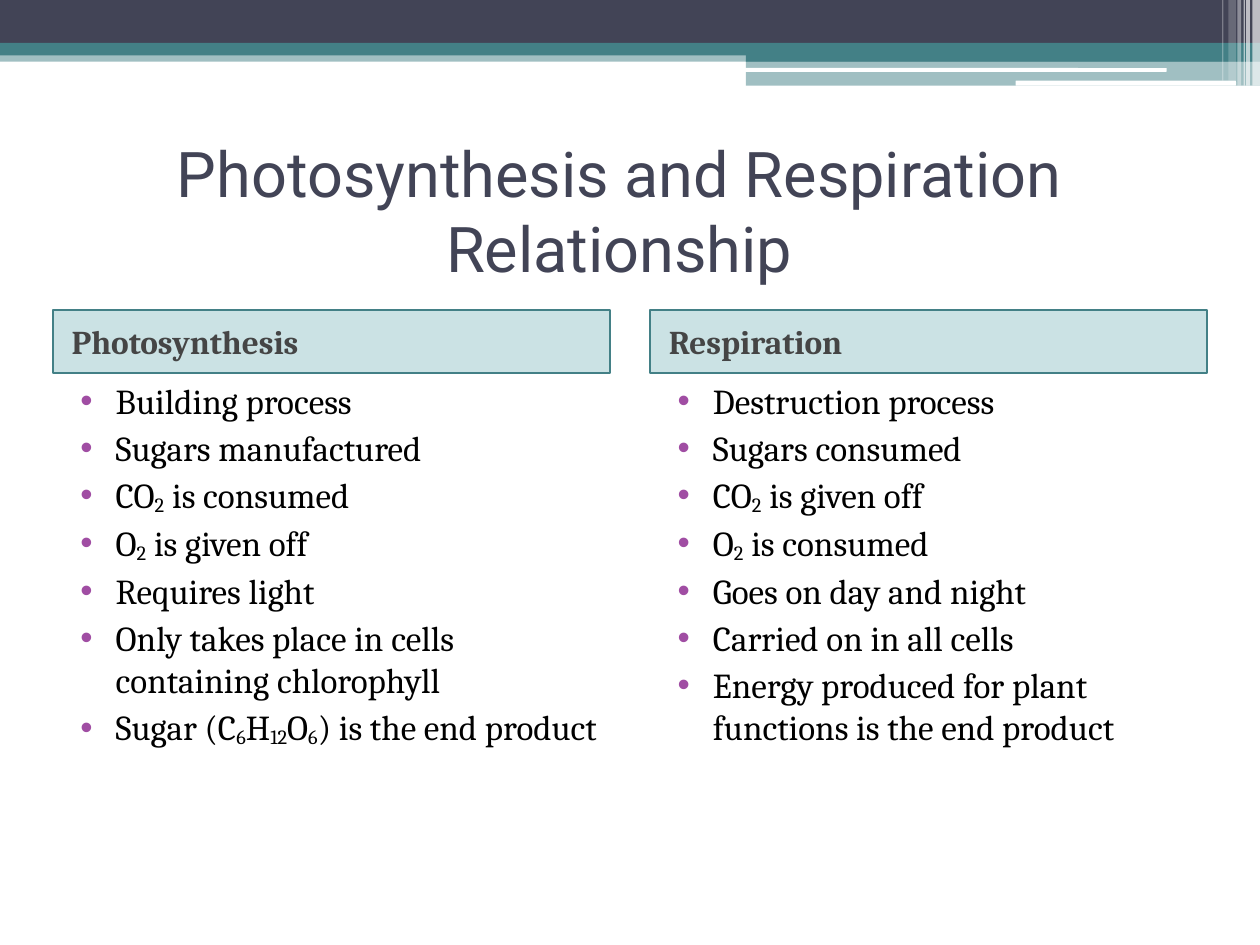
import pptx
import pptx.util
import pptx.dml.color
import pptx.enum.shapes
import pptx.enum.text
import pptx.oxml
import pptx.oxml.ns

Inches = pptx.util.Inches
Pt = pptx.util.Pt
SHAPE = pptx.enum.shapes.MSO_SHAPE
ANCHOR = pptx.enum.text.MSO_ANCHOR
ALIGN = pptx.enum.text.PP_ALIGN
NAVY, TEAL, WHITE = "424456", "438086", "FFFFFF"

# left, top, width, height, colour, opacity in percent
BANDS = [
    (0, 0.4, 10, 0.09, TEAL, 50),
    (0, 0, 10, 0.34, NAVY, 100),
    (0, 0.34, 10, 0.1, TEAL, 100),
    (5.92, 0.39, 4.08, 0.1, TEAL, 100),
    (5.92, 0.48, 4.08, 0.2, TEAL, 50),
]
WHITE_BARS = [(5.91, 0.54, 3.35, 0.03), (8.06, 0.64, 1.75, 0.04)]
# left, width, height, opacity in percent
STRIPES = [
    (9.94, 0.06, 0.68, 65),
    (9.89, 0.03, 0.68, 65),
    (9.87, 0.01, 0.68, 60),
    (9.82, 0.03, 0.68, 40),
    (9.75, 0.06, 0.64, 20),
    (9.7, 0.01, 0.64, 30),
]
# underscores enclose subscripts
COLUMNS = [
    (0.42, "Photosynthesis", [
        "Building process",
        "Sugars manufactured",
        "CO_2_ is consumed",
        "O_2_ is given off",
        "Requires light",
        "Only takes place in cells containing chlorophyll",
        "Sugar (C_6_H_12_O_6_) is the end product",
    ]),
    (5.16, "Respiration", [
        "Destruction process",
        "Sugars consumed",
        "CO_2_ is given off",
        "O_2_ is consumed",
        "Goes on day and night",
        "Carried on in all cells",
        "Energy produced for plant functions is the end product",
    ]),
]
COLUMN_WIDTH = 4.42


def rgb(value):
    """Turn a hex string into a colour."""
    return pptx.dml.color.RGBColor.from_string(value)


def sub_element(parent, tag, **attributes):
    """Append a DrawingML element with attributes."""
    element = pptx.oxml.parse_xml(f"<{tag} {pptx.oxml.ns.nsdecls('a')}/>")
    for name, value in attributes.items():
        element.set(name, str(value))
    parent.append(element)


def add_box(s, left, top, width, height, color, opacity=100, kind=SHAPE.RECTANGLE):
    """Add a filled shape without outline or shadow."""
    sp = s.shapes.add_shape(kind, Inches(left), Inches(top), Inches(width), Inches(height))
    sp.shadow.inherit = False
    sp.line.fill.background()
    sp.fill.solid()
    sp.fill.fore_color.rgb = rgb(color)
    if opacity < 100:
        fill_color = sp.fill._xPr.find(".//" + pptx.oxml.ns.qn("a:srgbClr"))
        sub_element(fill_color, "a:alpha", val=opacity * 1000)
    return sp


def format_run(r, size, color, font="Cambria", bold=False):
    """Set the font of a run."""
    r.font.name = font
    r.font.size = Pt(size)
    r.font.bold = bold
    r.font.color.rgb = rgb(color)


def indent(p, left, first=0):
    """Set the paragraph indents and the space before it."""
    p.space_before = Pt(3)
    pPr = p._p.get_or_add_pPr()
    pPr.set("marL", str(Inches(left)))
    pPr.set("indent", str(Inches(first)))
    return pPr


def add_title(s, text):
    """Place and format the slide title."""
    sp = s.shapes.title
    sp.left, sp.top, sp.width, sp.height = (Inches(v) for v in (0.33, 1.08, 9.17, 1.17))
    tf = sp.text_frame
    tf.text = text
    tf.word_wrap = True
    tf.auto_size = pptx.enum.text.MSO_AUTO_SIZE.NONE
    tf.vertical_anchor = ANCHOR.MIDDLE
    p = tf.paragraphs[0]
    p.alignment = ALIGN.CENTER
    format_run(p.runs[0], 36, NAVY, "Roboto")


def add_heading(s, left, text):
    """Add an outlined column heading."""
    sp = add_box(s, left, 2.46, COLUMN_WIDTH, 0.5, "328E97", 25)
    sp.line.color.rgb = rgb(TEAL)
    sp.line.width = Pt(1)
    tf = sp.text_frame
    tf.text = text
    tf.vertical_anchor = ANCHOR.MIDDLE
    p = tf.paragraphs[0]
    p.alignment = ALIGN.LEFT
    indent(p, 0.05)
    format_run(p.runs[0], 19, "454545", bold=True)


def add_bullet(p, text):
    """Fill a bulleted paragraph with normal and subscript runs."""
    pPr = indent(p, 0.4, -0.28)
    bullet_color = pptx.oxml.parse_xml(
        f'<a:buClr {pptx.oxml.ns.nsdecls("a")}><a:srgbClr val="A04DA3"/></a:buClr>')
    pPr.append(bullet_color)
    sub_element(pPr, "a:buFont", typeface="Arial")
    sub_element(pPr, "a:buChar", char="•")
    for i, piece in enumerate(text.split("_")):
        r = p.add_run()
        r.text = piece
        format_run(r, 20, "000000")
        if i % 2:
            r.font._element.set("baseline", "-10000")


def add_bullets(s, left, items):
    """Add a column of bullet points."""
    sp = s.shapes.add_textbox(Inches(left), Inches(2.96), Inches(COLUMN_WIDTH), Inches(4.25))
    tf = sp.text_frame
    tf.word_wrap = True
    for i, item in enumerate(items):
        p = tf.add_paragraph() if i else tf.paragraphs[0]
        add_bullet(p, item)


def main():
    """Build and save the slide."""
    prs = pptx.Presentation()
    prs.slide_width, prs.slide_height = Inches(10), Inches(7.5)
    s = prs.slides.add_slide(prs.slide_layouts[5])
    for band in BANDS:
        add_box(s, *band)
    for bar in WHITE_BARS:
        add_box(s, *bar, WHITE, kind=SHAPE.ROUNDED_RECTANGLE)
    for left, width, height, opacity in STRIPES:
        add_box(s, left, 0, width, height, WHITE, opacity)
    add_title(s, "Photosynthesis and Respiration Relationship")
    for left, heading, items in COLUMNS:
        add_heading(s, left, heading)
        add_bullets(s, left, items)
    prs.save("out.pptx")


if __name__ == "__main__":
    main()
